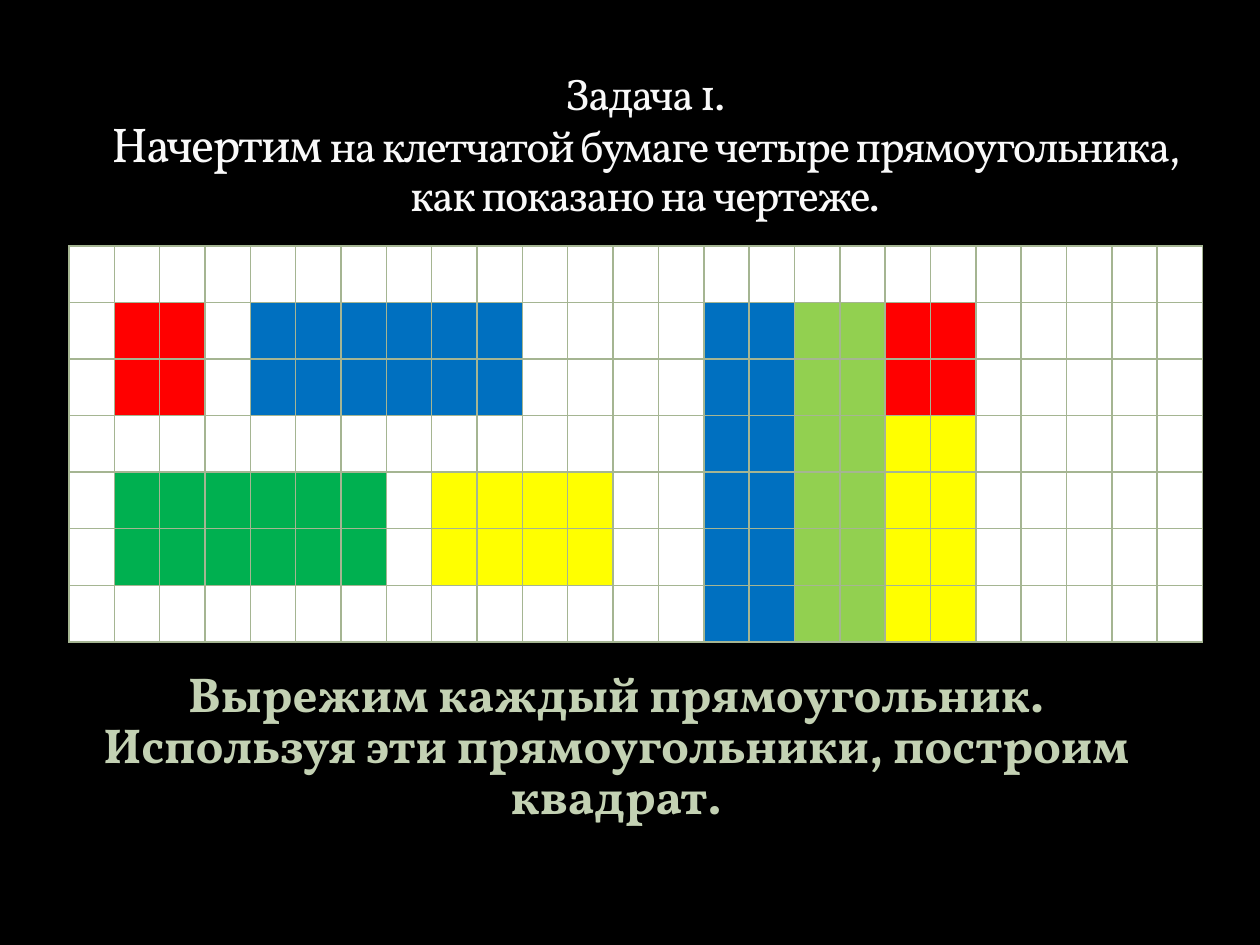
from lxml.etree import SubElement
from pptx import Presentation
from pptx.dml.color import RGBColor
from pptx.enum.text import MSO_ANCHOR, PP_ALIGN
from pptx.oxml.ns import qn
from pptx.util import Pt

# Content
FONT = "Vollkorn"
TITLE = [("Задача 1.", 25.2), ("\n", 25.2), ("Начертим", 27.9),
         (" на клетчатой бумаге четыре прямоугольника, как показано на чертеже.", 25.2)]
TASK = [("Вырежим каждый прямоугольник. Используя эти прямоугольники, построим квадрат.", 28)]
ROWS, COLS = 7, 25
PAPER, GRID = "FFFFFF", "A5B592"
RECTS = [  # first row, first column, rows, columns, colour
    (1, 1, 2, 2, "FF0000"),
    (1, 4, 2, 6, "0070C0"),
    (4, 1, 2, 6, "00B050"),
    (4, 8, 2, 4, "FFFF00"),
    (1, 14, 6, 2, "0070C0"),
    (1, 16, 6, 2, "92D050"),
    (1, 18, 2, 2, "FF0000"),
    (3, 18, 4, 2, "FFFF00"),
]
PX = 914400 // 126


def px(*values):
    return [round(v * PX) for v in values]


def rgb(value):
    return RGBColor.from_string(value)


def write(shape, runs, color, anchor, spacing, bold=False, track=0):
    tf = shape.text_frame
    tf.word_wrap = True
    tf.vertical_anchor = anchor
    p = tf.paragraphs[0]
    p.alignment = PP_ALIGN.CENTER
    p.line_spacing = spacing
    p.space_before = Pt(0)
    for text, size in runs:
        if text == "\n":
            p.add_line_break()
            continue
        r = p.add_run()
        r.text = text
        r.font.name = FONT
        r.font.size = Pt(size)
        r.font.bold = bold
        r.font.color.rgb = rgb(color)
        if track:
            r.font._element.set("spc", str(track))


def paint(cell, color):
    cell.fill.solid()
    cell.fill.fore_color.rgb = rgb(color)
    tcPr = cell._tc.get_or_add_tcPr()
    for i, side in enumerate(("lnL", "lnR", "lnT", "lnB")):
        ln = tcPr.makeelement(qn("a:" + side), {"w": str(Pt(1))})
        fill = SubElement(ln, qn("a:solidFill"))
        SubElement(fill, qn("a:srgbClr"), val=GRID)
        tcPr.insert(i, ln)  # borders come before the fill


prs = Presentation()
prs.slide_width, prs.slide_height = px(1260, 945)
s = prs.slides.add_slide(prs.slide_layouts[5])
s.background.fill.solid()
s.background.fill.fore_color.rgb = rgb("000000")

# Title
title = s.shapes.title
title.left, title.top, title.width, title.height = px(78, 59, 1134, 168)
write(title, TITLE, "F9F9F9", MSO_ANCHOR.BOTTOM, 0.9, track=-100)

# Squared paper with the rectangles
width, height = 1134, 396
table = s.shapes.add_table(ROWS, COLS, *px(69, 246, width, height)).table
table.first_row = table.horz_banding = False
for col in table.columns:
    col.width = px(width / COLS)[0]
for row in table.rows:
    row.height = px(height / ROWS)[0]
colors = {(r, c): color for top, left, h, w, color in RECTS
          for r in range(top, top + h) for c in range(left, left + w)}
for r in range(ROWS):
    for c in range(COLS):
        paint(table.cell(r, c), colors.get((r, c), PAPER))

# Task below the paper
task = s.shapes.add_textbox(*px(49, 669, 1134, 158))
write(task, TASK, "C3D1B3", MSO_ANCHOR.MIDDLE, 0.87, bold=True)

prs.save("out.pptx")
